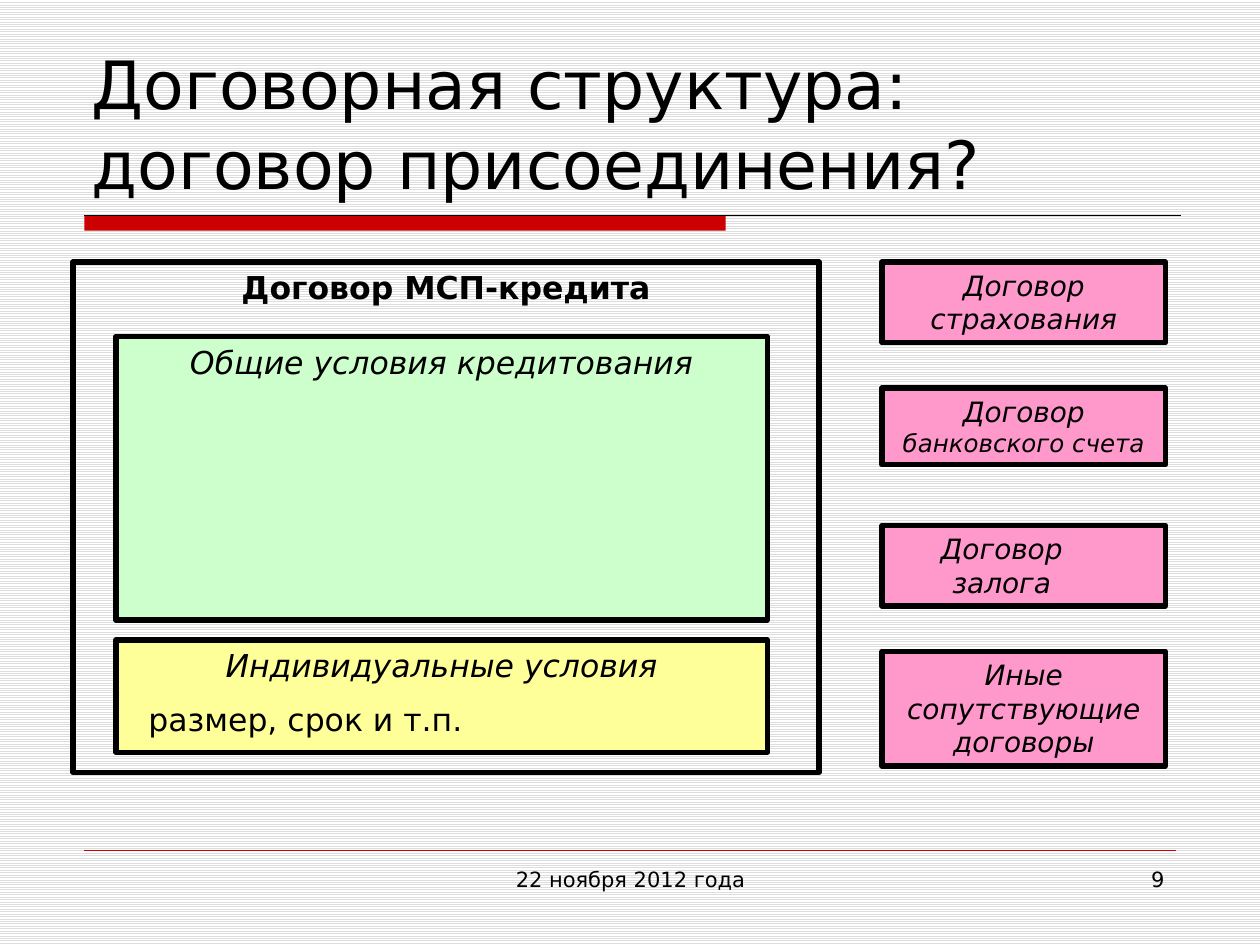
"""Build a slide on the contract structure of a small business loan."""
from lxml import etree
from pptx import Presentation
from pptx.dml.color import RGBColor
from pptx.enum.dml import MSO_PATTERN
from pptx.enum.shapes import MSO_CONNECTOR, MSO_SHAPE
from pptx.enum.text import MSO_ANCHOR, PP_ALIGN
from pptx.oxml.ns import qn
from pptx.util import Inches, Pt

RECTANGLE = MSO_SHAPE.RECTANGLE
STRAIGHT = MSO_CONNECTOR.STRAIGHT
TOP, BOTTOM = MSO_ANCHOR.TOP, MSO_ANCHOR.BOTTOM
LEFT, CENTER, RIGHT = PP_ALIGN.LEFT, PP_ALIGN.CENTER, PP_ALIGN.RIGHT
STRIPES = MSO_PATTERN.LIGHT_HORIZONTAL

BLACK = RGBColor(0x00, 0x00, 0x00)
WHITE = RGBColor(0xFF, 0xFF, 0xFF)
GREY = RGBColor(0xDD, 0xDD, 0xDD)
RED = RGBColor(0xCC, 0x00, 0x00)
GREEN = RGBColor(0xCC, 0xFF, 0xCC)
YELLOW = RGBColor(0xFF, 0xFF, 0x99)
PINK = RGBColor(0xFF, 0x99, 0xCC)
FONT = "DejaVu Sans"

deck = Presentation()
deck.slide_width, deck.slide_height = Inches(10), Inches(7.5)
page = deck.slides.add_slide(deck.slide_layouts[6])
backdrop = page.background.fill
backdrop.patterned()
backdrop.pattern = STRIPES
backdrop.fore_color.rgb = GREY
backdrop.back_color.rgb = WHITE


def write(box, text, size, align, anchor=TOP, bold=False, italic=False):
    frame = box.text_frame
    frame.word_wrap = True
    frame.vertical_anchor = anchor
    frame.text = text
    for para in frame.paragraphs:
        para.alignment = align
        for span in para.runs:
            span.font.name = FONT
            span.font.size = Pt(size)
            span.font.bold = bold
            span.font.italic = italic
            span.font.color.rgb = BLACK


def add_box(left, top, width, height, fill):
    box = page.shapes.add_shape(
        RECTANGLE, Inches(left), Inches(top), Inches(width), Inches(height))
    box.shadow.inherit = False
    if fill is None:
        box.fill.background()
    else:
        box.fill.solid()
        box.fill.fore_color.rgb = fill
    box.line.color.rgb = BLACK
    box.line.width = Pt(3)
    return box


title_bar = add_box(0.67, 1.71, 5.09, 0.12, RED)
title_bar.line.fill.background()

for right, y, color, weight in [(9.37, 1.71, BLACK, 0.75), (9.33, 6.75, RED, 0.25)]:
    rule = page.shapes.add_connector(
        STRAIGHT, Inches(0.67), Inches(y), Inches(right), Inches(y))
    rule.line.color.rgb = color
    rule.line.width = Pt(weight)
    etree.SubElement(rule.element.spPr, qn("a:effectLst"))

for left, top, width, height, text, size, align, anchor in [
    (0.63, 0.33, 8.75, 1.33, "Договорная структура:\vдоговор присоединения?", 38, LEFT, BOTTOM),
    (3.42, 6.83, 3.17, 0.52, "22 ноября 2012 года", 12, CENTER, TOP),
    (7.17, 6.83, 2.17, 0.52, "9", 12, RIGHT, TOP),
]:
    label = page.shapes.add_textbox(
        Inches(left), Inches(top), Inches(width), Inches(height))
    write(label, text, size, align, anchor)

loan = add_box(0.58, 2.08, 5.92, 4.05, None)
write(loan, "Договор МСП-кредита", 18, CENTER, bold=True)

general_terms = add_box(0.92, 2.67, 5.17, 2.25, GREEN)
write(general_terms, "Общие условия кредитования", 18, CENTER, italic=True)

individual_terms = add_box(0.92, 5.08, 5.17, 0.89, YELLOW)
write(individual_terms, "Индивидуальные условия\nразмер, срок и т.п.", 18, CENTER, italic=True)
details = individual_terms.text_frame.paragraphs[1]
details.alignment = LEFT
details.space_before = Pt(9)
details.runs[0].font.italic = False
details._p.get_or_add_pPr().set("marL", str(Inches(0.16)))

side_boxes = []
for top, height, text in [
    (2.08, 0.64, "Договор страхования"),
    (3.08, 0.61, "Договор "),
    (4.17, 0.64, "Договор\nзалога"),
    (5.17, 0.91, "Иные сопутствующие договоры"),
]:
    box = add_box(7, top, 2.25, height, PINK)
    write(box, text, 16, CENTER, italic=True)
    side_boxes.append(box)

insurance, account, pledge, others = side_boxes
span = account.text_frame.paragraphs[0].add_run()
span.text = "банковского счета"
span.font.name = FONT
span.font.size = Pt(14)
span.font.italic = True
span.font.color.rgb = BLACK
pledge.text_frame.paragraphs[0]._p.get_or_add_pPr().set("marR", str(Inches(0.35)))

deck.save("out.pptx")
